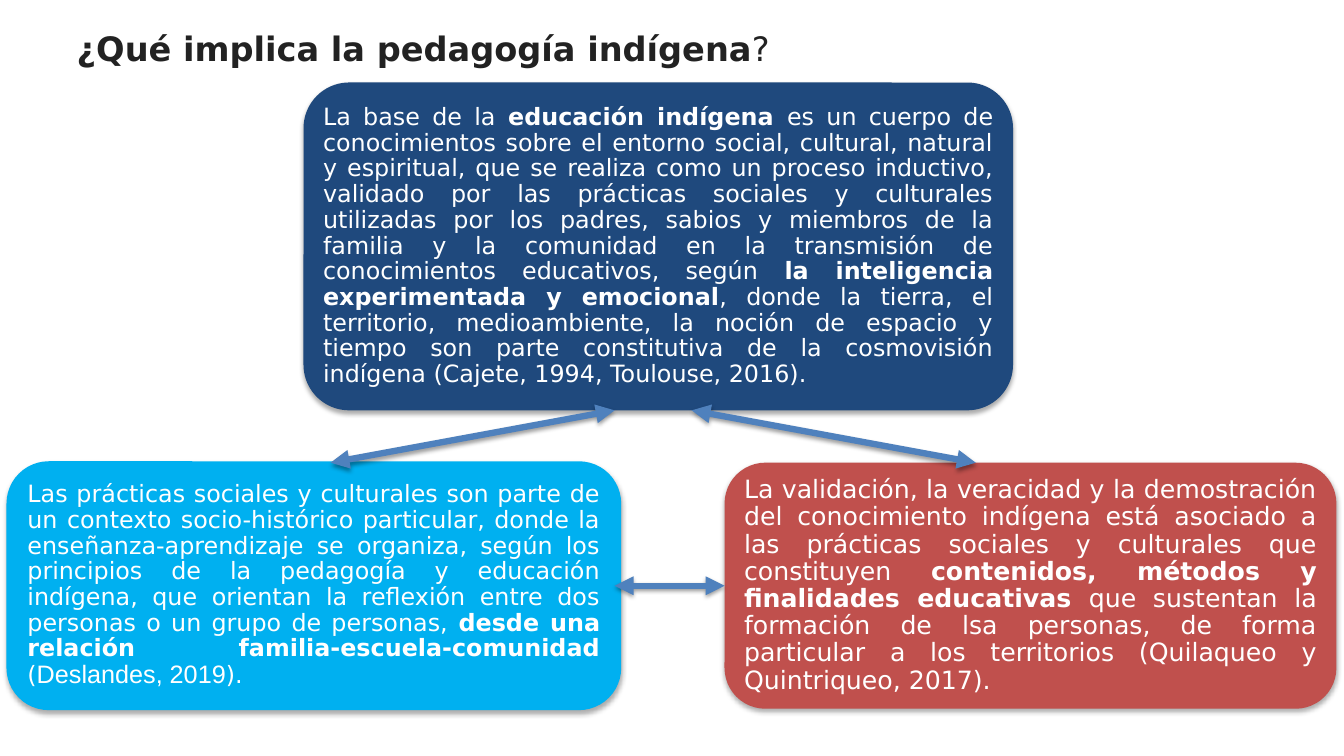
"""Build the slide on what indigenous pedagogy implies."""
import dataclasses

import pptx
import pptx.dml.color
import pptx.enum.shapes
import pptx.enum.text
import pptx.oxml
import pptx.oxml.ns
import pptx.util

Cm, Pt = pptx.util.Cm, pptx.util.Pt


@dataclasses.dataclass(frozen=True)
class Theme:
    """Colours, fonts and type sizes of the slide."""
    font: str = "DejaVu Sans"
    cite_font: str = "Arial"
    title: str = "222222"
    text: str = "FFFFFF"
    navy: str = "1F497D"
    sky: str = "00B0F0"
    red: str = "C0504D"
    arrow: str = "4F81BD"
    title_size: int = 24
    body_size: int = 17
    large_size: int = 18


THEME = Theme()

BASE = [
    ("La base de la ", False),
    ("educación indígena ", True),
    ("es un cuerpo de conocimientos sobre el entorno social, cultural, natural y "
     "espiritual, que se realiza como un proceso inductivo, validado por las prácticas "
     "sociales y culturales utilizadas por los padres, sabios y miembros de la familia y "
     "la comunidad en la transmisión de conocimientos educativos, según ", False),
    ("la inteligencia experimentada y emocional", True),
    (", donde la tierra, el territorio, medioambiente, la noción de espacio y tiempo son "
     "parte constitutiva de la cosmovisión indígena (Cajete, 1994, Toulouse, 2016).", False),
]
PRACTICES = [
    ("Las prácticas sociales y culturales son parte de un contexto socio-histórico "
     "particular, donde la enseñanza-aprendizaje se organiza, según los principios de la "
     "pedagogía y educación indígena, que orientan la reflexión entre dos personas o un "
     "grupo de personas, ", False),
    ("desde una relación familia-escuela-comunidad", True),
    (" (", False),
    ("Deslandes, 2019", False),
    (").", False),
]
VALIDATION = [
    ("La validación, la veracidad y la demostración del conocimiento indígena está "
     "asociado a las prácticas sociales y culturales que constituyen ", False),
    ("contenidos, métodos y finalidades educativas ", True),
    ("que sustentan la formación de lsa personas, de forma particular a los territorios "
     "(Quilaqueo y Quintriqueo, 2017).", False),
]


def rgb(color):
    """Return the colour object for a hex string."""
    return pptx.dml.color.RGBColor.from_string(color)


def add_shadow(effects, blur, dist, alpha):
    """Append a downward black shadow to an effect list."""
    effects.append(pptx.oxml.parse_xml(
        f'<a:outerShdw {pptx.oxml.ns.nsdecls("a")} blurRad="{Pt(blur)}" dist="{Pt(dist)}" '
        f'dir="5400000" rotWithShape="0"><a:srgbClr val="000000">'
        f'<a:alpha val="{alpha * 1000}"/></a:srgbClr></a:outerShdw>'))


def write_runs(p, runs, size, color):
    """Fill a paragraph with (text, bold) runs in one font, and return the runs."""
    p.font.name, p.font.size = THEME.font, Pt(size)
    p.font.color.rgb = rgb(color)
    for text, bold in runs:
        r = p.add_run()
        r.text, r.font.bold = text, bold
    return p.runs


def add_title(s, x, y, w, h):
    """Place the slide title in the given box."""
    sp = s.shapes.title
    sp.left, sp.top, sp.width, sp.height = Cm(x), Cm(y), Cm(w), Cm(h)
    tf = sp.text_frame
    tf.word_wrap = False
    tf.auto_size = pptx.enum.text.MSO_AUTO_SIZE.SHAPE_TO_FIT_TEXT
    tf.vertical_anchor = pptx.enum.text.MSO_ANCHOR.TOP
    p = tf.paragraphs[0]
    p.alignment = pptx.enum.text.PP_ALIGN.LEFT
    write_runs(p, [("¿Qué implica la pedagogía indígena", True), ("?", False)],
               THEME.title_size, THEME.title)


def add_card(s, x, y, w, h, fill, runs, size, radius=1.03, outline=None):
    """Place a rounded card with justified text in the given box."""
    sp = s.shapes.add_shape(pptx.enum.shapes.MSO_SHAPE.ROUNDED_RECTANGLE,
                            Cm(x), Cm(y), Cm(w), Cm(h))
    sp.adjustments[0] = radius / h
    sp.fill.solid()
    sp.fill.fore_color.rgb = rgb(fill)
    if outline:
        sp.line.color.rgb, sp.line.width = rgb(outline), Pt(2)
    else:
        sp.line.fill.background()
    sp.shadow.inherit = False
    add_shadow(sp._element.spPr.find(pptx.oxml.ns.qn("a:effectLst")), 3.5, 2.2, 32)
    tf = sp.text_frame
    tf.word_wrap = True
    tf.vertical_anchor = pptx.enum.text.MSO_ANCHOR.MIDDLE
    inset = Cm(0.49 - 0.29 * radius)
    tf.margin_left = tf.margin_right = tf.margin_top = tf.margin_bottom = inset
    p = tf.paragraphs[0]
    p.alignment, p.line_spacing = pptx.enum.text.PP_ALIGN.JUSTIFY, 0.9
    return write_runs(p, runs, size, THEME.text)


def add_arrow(s, x1, y1, x2, y2):
    """Draw a double-headed arrow between two points."""
    cn = s.shapes.add_connector(pptx.enum.shapes.MSO_CONNECTOR.STRAIGHT,
                                Cm(x1), Cm(y1), Cm(x2), Cm(y2))
    cn.line.color.rgb, cn.line.width = rgb(THEME.arrow), Pt(4.5)
    ln = cn.line._get_or_add_ln()
    for end in ("headEnd", "tailEnd"):
        ln.append(pptx.oxml.parse_xml(
            f'<a:{end} {pptx.oxml.ns.nsdecls("a")} type="triangle"/>'))
    effects = pptx.oxml.parse_xml(f'<a:effectLst {pptx.oxml.ns.nsdecls("a")}/>')
    cn._element.spPr.append(effects)
    add_shadow(effects, 3.1, 1.6, 38)


def add_diagram(s, x, y, w, h):
    """Place the three cards and the arrows joining them in the given box."""
    card_w, card_h, top_w, top_h = 15.42, 6.2, 17.88, 8.26
    low_y, right_x = y + h - card_h, x + w - card_w
    add_card(s, right_x, low_y, card_w, card_h, THEME.red, VALIDATION, THEME.large_size)
    practices = add_card(s, x, low_y, card_w, card_h, THEME.sky, PRACTICES,
                         THEME.body_size, outline=THEME.sky)
    cite = practices[3].font
    cite.name, cite.size = THEME.cite_font, Pt(THEME.large_size)
    add_card(s, x + 7.45, y, top_w, top_h, THEME.navy, BASE, THEME.body_size, radius=1.15)
    mid_x = x + 16.26
    for side in (1, -1):
        add_arrow(s, mid_x + side * 0.97, y + top_h, mid_x + side * 8.13, low_y)
    mid_y = low_y + card_h / 2
    add_arrow(s, x + card_w - 0.13, mid_y, right_x, mid_y)


def main():
    """Build and save the presentation."""
    prs = pptx.Presentation()
    prs.slide_width, prs.slide_height = Cm(33.87), Cm(19.05)
    s = prs.slides.add_slide(prs.slide_layouts[5])
    add_title(s, 1.68, 0.58, 18.03, 1.27)
    add_diagram(s, 0.2, 2.08, 33.48, 15.78)
    prs.save("out.pptx")


if __name__ == "__main__":
    main()
